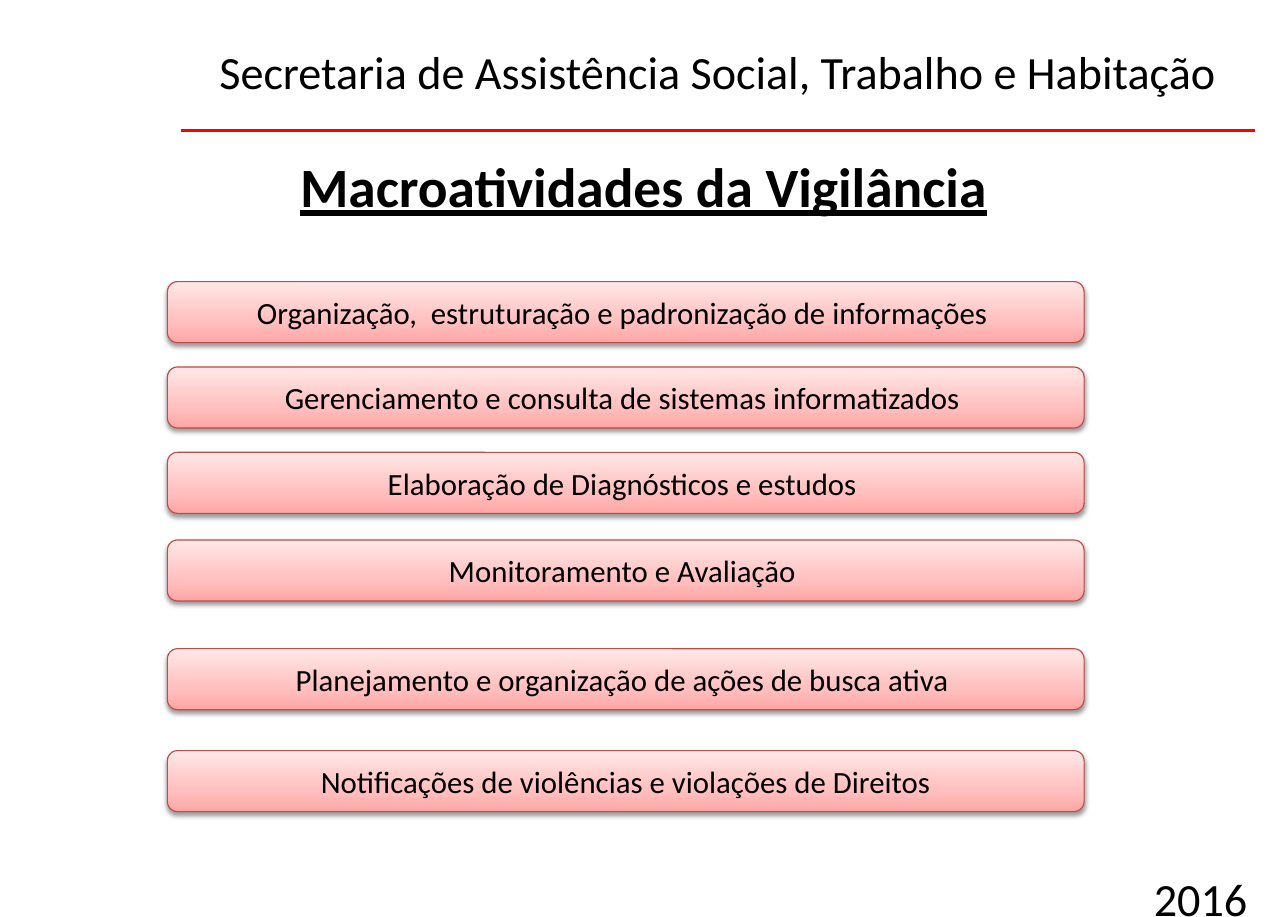
"""Build the slide listing the macro-activities of social surveillance."""
from copy import deepcopy
from typing import NamedTuple

from lxml import etree
from pptx import Presentation
from pptx import util as u
from pptx.dml.color import RGBColor
from pptx.enum import shapes, text
from pptx.oxml import parse_xml
from pptx.oxml.ns import qn

NS = 'xmlns:a="http://schemas.openxmlformats.org/drawingml/2006/main"'
WIDTH, HEIGHT = u.Inches(11.62), u.Inches(8.27)
FONT, BLACK, RED, BORDER = "Calibri", "000000", "FF0000", "BF4C48"
GRADIENT = [(0, "FFA6A5"), (0.35, "FFC0BF"), (1, "FFE7E7")]
SHADOW = (
    f'<a:outerShdw {NS} blurRad="40000" dist="20000" dir="5400000" rotWithShape="0">'
    '<a:srgbClr val="000000"><a:alpha val="38000"/></a:srgbClr></a:outerShdw>'
)


class Box(NamedTuple):
    """A rectangle in percent of the slide's width and height."""

    left: float
    top: float
    width: float
    height: float


class Activity(NamedTuple):
    """A bar's label and its top in percent of the slide's height."""

    label: str
    top: float


class Caption(NamedTuple):
    """A plain text line of the page frame."""

    label: str
    box: Box


TITLE = Caption("Macroatividades da Vigilância", Box(5, 15.84, 89.93, 78.48))
CAPTIONS = [
    Caption("Secretaria de Assistência Social, Trabalho e Habitação",
            Box(16.09, 4, 81.07, 7.5)),
    Caption("2016", Box(88.64, 94.2, 11.3, 7.5)),
]
ACTIVITIES = [
    Activity("Organização,  estruturação e padronização de informações ", 30.71),
    Activity("Gerenciamento e consulta de sistemas informatizados ", 40.02),
    Activity("Elaboração de Diagnósticos e estudos ", 49.33),
    Activity("Monitoramento e Avaliação ", 58.89),
    Activity("Planejamento e organização de ações de busca ativa ", 70.74),
    Activity("Notificações de violências e violações de Direitos", 81.86),
]


def color(value: str) -> RGBColor:
    """Return the colour of a hex string."""
    return RGBColor.from_string(value)


def across(share: float) -> int:
    """Return a percentage of the slide's width."""
    return round(WIDTH * share / 100)


def down(share: float) -> int:
    """Return a percentage of the slide's height."""
    return round(HEIGHT * share / 100)


def place(box: Box) -> tuple[int, int, int, int]:
    """Return the box as slide lengths."""
    return across(box.left), down(box.top), across(box.width), down(box.height)


def write(sp, label: str, size: int, align, anchor) -> None:
    """Put one formatted paragraph into a shape."""
    tf = sp.text_frame
    tf.word_wrap = True
    tf.vertical_anchor = anchor
    p = tf.paragraphs[0]
    p.text = label
    p.alignment = align
    p.font.name, p.font.size = FONT, u.Pt(size)
    p.font.color.rgb = color(BLACK)


def add_title(slide) -> None:
    """Format the title placeholder."""
    sp = slide.shapes.title
    sp.left, sp.top, sp.width, sp.height = place(TITLE.box)
    write(sp, TITLE.label, 36, text.PP_ALIGN.CENTER, text.MSO_ANCHOR.TOP)
    tf = sp.text_frame
    tf.auto_size = text.MSO_AUTO_SIZE.NONE
    tf.margin_left = tf.margin_right = u.Inches(0.11)
    tf.margin_top = tf.margin_bottom = u.Inches(0.06)
    font = tf.paragraphs[0].font
    font.bold = font.underline = True


def add_caption(slide, caption: Caption) -> None:
    """Draw a text line of the page frame."""
    sp = slide.shapes.add_textbox(*place(caption.box))
    write(sp, caption.label, 30, text.PP_ALIGN.LEFT, text.MSO_ANCHOR.TOP)
    tf = sp.text_frame
    tf.margin_left = tf.margin_right = u.Inches(0.11)
    tf.margin_top = tf.margin_bottom = u.Inches(0.06)


def add_rule(slide) -> None:
    """Draw the red line under the header."""
    y = down(14.24)
    line = slide.shapes.add_connector(
        shapes.MSO_CONNECTOR.STRAIGHT, across(14.03), y, across(97.42), y)
    line.line.color.rgb = color(RED)
    line.line.width = u.Pt(1.5)
    etree.SubElement(line._element.spPr, qn("a:effectLst"))


def add_bar(slide, activity: Activity) -> None:
    """Draw a rounded gradient bar with its label."""
    sp = slide.shapes.add_shape(
        shapes.MSO_SHAPE.ROUNDED_RECTANGLE, *place(Box(13, activity.top, 71.17, 6.65)))
    sp.fill.gradient()
    sp.fill.gradient_angle = 90
    stops = sp._element.spPr.find(".//" + qn("a:gsLst"))
    stops.append(deepcopy(stops[0]))
    for stop, (position, value) in zip(sp.fill.gradient_stops, GRADIENT):
        stop.position = position
        stop.color.rgb = color(value)
    sp.line.color.rgb = color(BORDER)
    sp.line.width = u.Pt(0.75)
    sp.shadow.inherit = False
    sp._element.spPr.find(qn("a:effectLst")).append(parse_xml(SHADOW))
    write(sp, activity.label, 20, text.PP_ALIGN.CENTER, text.MSO_ANCHOR.MIDDLE)


def main() -> None:
    """Build and save the presentation."""
    prs = Presentation()
    prs.slide_width, prs.slide_height = WIDTH, HEIGHT
    slide = prs.slides.add_slide(prs.slide_layouts[5])
    add_title(slide)
    add_rule(slide)
    for caption in CAPTIONS:
        add_caption(slide, caption)
    for activity in ACTIVITIES:
        add_bar(slide, activity)
    prs.save("out.pptx")


if __name__ == "__main__":
    main()
